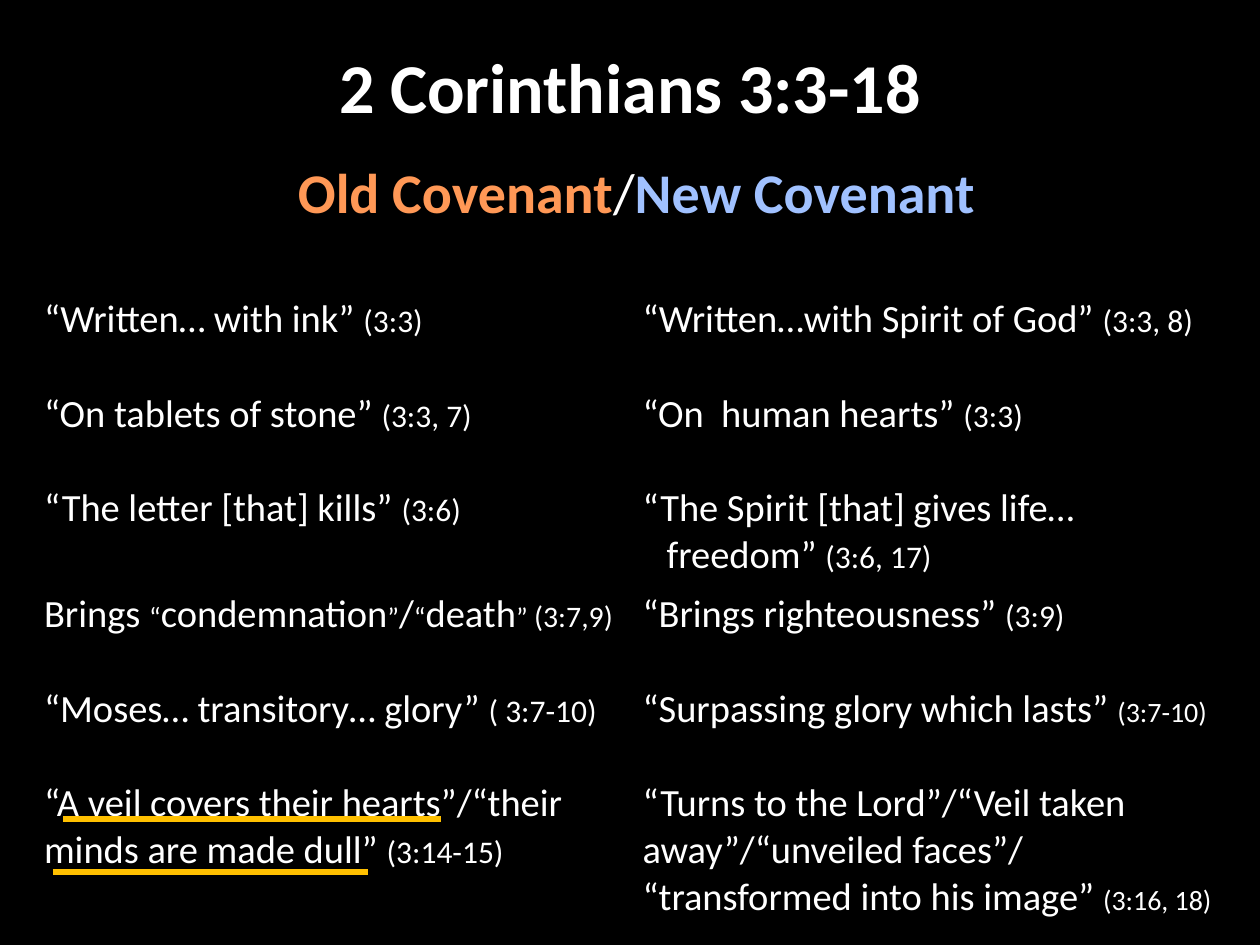
from pptx import Presentation
from pptx import util as u
from pptx.dml.color import RGBColor
from pptx.enum import shapes, text
from pptx.oxml import ns, xmlchemy

BLACK = RGBColor(0x00, 0x00, 0x00)
WHITE = RGBColor(0xFF, 0xFF, 0xFF)
ORANGE = RGBColor(0xFF, 0x98, 0x56)
BLUE = RGBColor(0xA0, 0xC1, 0xFF)
GOLD = RGBColor(0xFF, 0xC0, 0x00)

FONT = "Calibri"
WIDTH, HEIGHT = u.Inches(10), u.Inches(7.5)
MARGIN = 0.05 * WIDTH
ROW_HEIGHT = 0.1 * HEIGHT
HANGING = 0.19
PLAIN_TABLE = "{2D5ABB26-0587-4C30-8999-92F81FD0307C}"

ROWS = [
    (HANGING,
     [("“Written… with ink” ", 22), ("(3:3)", 18)],
     [("“Written…with Spirit of God” ", 22), ("(3:3, 8)", 18)]),
    (HANGING,
     [("“On tablets of stone” ", 22), ("(3:3, 7)", 18)],
     [("“On  human hearts” ", 22), ("(3:3)", 18)]),
    (HANGING,
     [("“The letter [that] kills” ", 22), ("(3:6)", 18)],
     [("“The Spirit [that] gives life… freedom” ", 22), ("(3:6, 17)", 18)]),
    (0,
     [("Brings ", 22), ("“", 16), ("condemnation", 22), ("”", 16), ("/", 22),
      ("“", 16), ("death", 22), ("” ", 16), ("(3:7,9)", 17)],
     [("“Brings righteousness” ", 22), ("(3:9)", 18)]),
    (HANGING,
     [("“Moses… transitory… glory” ", 22), ("( 3:7-10)", 18)],
     [("“Surpassing glory which lasts” ", 22), ("(3:7-10)", 16)]),
    (0,
     [("“A veil covers their hearts”/“their minds are made dull” ", 22),
      ("(3:14-15)", 18)],
     [("“Turns to the Lord”/“Veil taken away”/“unveiled faces”/ "
       "“transformed into his image” ", 22), ("(3:16, 18)", 16)]),
]


def add_run(para, words, size, color=WHITE, bold=False):
    span = para.add_run()
    span.text = words
    span.font.name = FONT
    span.font.size = u.Pt(size)
    span.font.bold = bold
    span.font.color.rgb = color


def set_hanging(para, inches):
    properties = para._p.get_or_add_pPr()
    properties.set("marL", str(u.Inches(inches)))
    properties.set("indent", str(-u.Inches(inches)))


def add_heading(page, top, height, runs):
    box = page.shapes.add_textbox(
        int(MARGIN), int(top * HEIGHT), int(WIDTH - 2 * MARGIN), int(height * HEIGHT))
    frame = box.text_frame
    frame.word_wrap = True
    frame.vertical_anchor = text.MSO_ANCHOR.TOP
    para = frame.paragraphs[0]
    para.alignment = text.PP_ALIGN.CENTER
    for run in runs:
        add_run(para, *run)
    return box


def add_comparison(page):
    left = MARGIN / 2
    table = page.shapes.add_table(
        len(ROWS), 2, int(left), u.Inches(2.3),
        int(WIDTH - 2 * left), int(ROW_HEIGHT * len(ROWS))).table
    table.first_row = False
    table.horz_banding = False
    table._tbl.tblPr.find(ns.qn("a:tableStyleId")).text = PLAIN_TABLE
    for row, (hanging, *sides) in enumerate(ROWS):
        table.rows[row].height = int(ROW_HEIGHT)
        for column, runs in enumerate(sides):
            cell = table.cell(row, column)
            cell.fill.background()
            para = cell.text_frame.paragraphs[0]
            if hanging:
                set_hanging(para, hanging)
            for words, size in runs:
                add_run(para, words, size)


def add_underline(page, start, end, level):
    line = page.shapes.add_connector(
        shapes.MSO_CONNECTOR.STRAIGHT,
        u.Inches(start), u.Inches(level), u.Inches(end), u.Inches(level))
    line.line.color.rgb = GOLD
    line.line.width = u.Pt(3)
    line._element.spPr.append(xmlchemy.OxmlElement("a:effectLst"))


def main():
    deck = Presentation()
    deck.slide_width, deck.slide_height = WIDTH, HEIGHT
    page = deck.slides.add_slide(deck.slide_layouts[6])
    page.background.fill.solid()
    page.background.fill.fore_color.rgb = BLACK

    add_comparison(page)
    add_underline(page, 0.42, 2.92, 6.92)
    add_underline(page, 0.5, 3.5, 6.5)
    add_heading(page, 0.04, 0.13, [("2 Corinthians 3:3-18", 40, WHITE, True)])
    covenants = add_heading(page, 0.16, 0.09, [
        (" Old Covenant", 32, ORANGE, True),
        ("/", 32),
        ("New Covenant", 32, BLUE, True)])
    set_hanging(covenants.text_frame.paragraphs[0], 0.38)

    deck.save("out.pptx")


if __name__ == "__main__":
    main()
